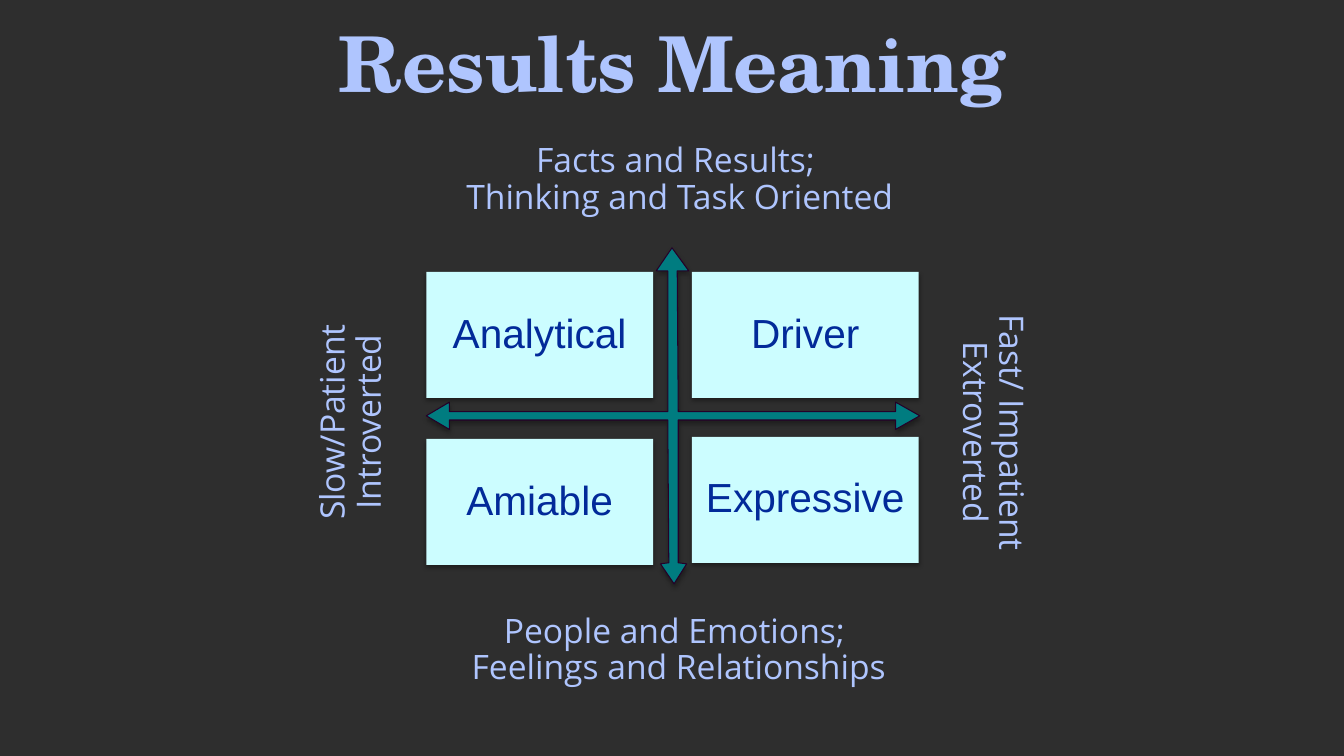
from lxml import etree
from pptx import Presentation
from pptx.dml.color import RGBColor
from pptx.enum.shapes import MSO_SHAPE
from pptx.enum.text import MSO_ANCHOR, MSO_AUTO_SIZE, PP_ALIGN
from pptx.oxml.ns import qn
from pptx.util import Pt

PX = 9525
RECTANGLE = MSO_SHAPE.RECTANGLE
TOP, MIDDLE = MSO_ANCHOR.TOP, MSO_ANCHOR.MIDDLE
CENTER = PP_ALIGN.CENTER
NO_AUTOFIT = MSO_AUTO_SIZE.NONE

CHARCOAL = RGBColor(0x2E, 0x2E, 0x2E)
PERIWINKLE = RGBColor(0xAF, 0xC5, 0xFE)
ICE = RGBColor(0xCC, 0xFD, 0xFF)
NAVY = RGBColor(0x02, 0x2A, 0x99)
TEAL = RGBColor(0x00, 0x7C, 0x80)
PLUM = RGBColor(0x25, 0x00, 0x29)

CARD_WIDTH, CARD_HEIGHT = 216, 120
CARDS = [
    ("Analytical", 406, 259),
    ("Driver", 659, 259),
    ("Amiable", 406, 418),
    ("Expressive", 659, 416),
]
AXIS_LABELS = [
    (["People and Emotions; ", "Feelings and Relationships"], (351, 575, 577, 73), 0),
    (["Fast/ Impatient", "Extroverted"], (659, 363, 577, 84), 90),
    (["Slow/Patient", "Introverted"], (44, 367, 577, 84), 270),
]
CROSS_ARROW = [
    (406, 396), (428, 383), (428, 392), (636, 392), (636, 258), (625, 258),
    (640, 236), (656, 258), (645, 258), (646, 392), (853, 392), (853, 383),
    (876, 396), (853, 409), (853, 400), (646, 400), (646, 536), (654, 537),
    (642, 556), (629, 537), (637, 536), (636, 400), (428, 400), (428, 409),
]


def place(box, left, top, width, height):
    box.left, box.top = left * PX, top * PX
    box.width, box.height = width * PX, height * PX


def add_soft_shadow(shape):
    shape.shadow.inherit = False
    effects = shape._element.spPr.find(qn("a:effectLst"))
    shadow = etree.SubElement(
        effects, qn("a:outerShdw"), blurRad=str(Pt(3.1)), dist=str(Pt(1.8)),
        dir="5400000", algn="t", rotWithShape="0")
    color = etree.SubElement(shadow, qn("a:srgbClr"), val="000000")
    etree.SubElement(color, qn("a:alpha"), val="35000")


def write_text(box, lines, font_name, size, color, bold=False,
               anchor=TOP, inset=10, margin=0, indent=0):
    frame = box.text_frame
    frame.word_wrap = True
    frame.auto_size = NO_AUTOFIT
    frame.vertical_anchor = anchor
    frame.margin_left = frame.margin_right = inset * PX
    frame.margin_top = frame.margin_bottom = inset * PX
    frame.text = "\n".join(lines)
    for para in frame.paragraphs:
        properties = para._p.get_or_add_pPr()
        properties.set("marL", str(margin * PX))
        properties.set("indent", str(indent * PX))
        para.alignment = CENTER
        para.line_spacing = 0.9
        para.space_before = Pt(0)
        para.font.name = font_name
        para.font.size = Pt(size)
        para.font.bold = bold
        para.font.color.rgb = color


def add_cross_arrow(page):
    builder = page.shapes.build_freeform(*CROSS_ARROW[0], scale=PX)
    builder.add_line_segments(CROSS_ARROW[1:], close=True)
    arrow = builder.convert_to_shape()
    arrow.fill.solid()
    arrow.fill.fore_color.rgb = TEAL
    arrow.line.color.rgb = PLUM
    arrow.line.width = Pt(0.75)
    add_soft_shadow(arrow)


def add_card(page, label, left, top):
    card = page.shapes.add_shape(
        RECTANGLE, left * PX, top * PX, CARD_WIDTH * PX, CARD_HEIGHT * PX)
    card.fill.solid()
    card.fill.fore_color.rgb = ICE
    card.line.fill.background()
    add_soft_shadow(card)
    write_text(card, [label], "Arial", 29, NAVY, anchor=MIDDLE, inset=12)


def add_axis_label(page, lines, bounds, rotation):
    box = page.shapes.add_textbox(0, 0, 0, 0)
    place(box, *bounds)
    box.rotation = rotation
    write_text(box, lines, "Open Sans", 24, PERIWINKLE, margin=48, indent=-34)


def main():
    deck = Presentation()
    deck.slide_width, deck.slide_height = 1280 * PX, 720 * PX
    page = deck.slides.add_slide(deck.slide_layouts[0])
    page.background.fill.solid()
    page.background.fill.fore_color.rgb = CHARCOAL

    title, subtitle = page.placeholders
    place(title, 112, 15, 1057, 81)
    write_text(title, ["Results Meaning"], "TeX Gyre Schola", 55, PERIWINKLE, bold=True)
    place(subtitle, 352, 127, 577, 73)
    write_text(subtitle, ["Facts and Results; ", "Thinking and Task Oriented"],
               "Open Sans", 24, PERIWINKLE, margin=14)

    add_cross_arrow(page)
    for card in CARDS:
        add_card(page, *card)
    for label in AXIS_LABELS:
        add_axis_label(page, *label)
    deck.save("out.pptx")


if __name__ == "__main__":
    main()
